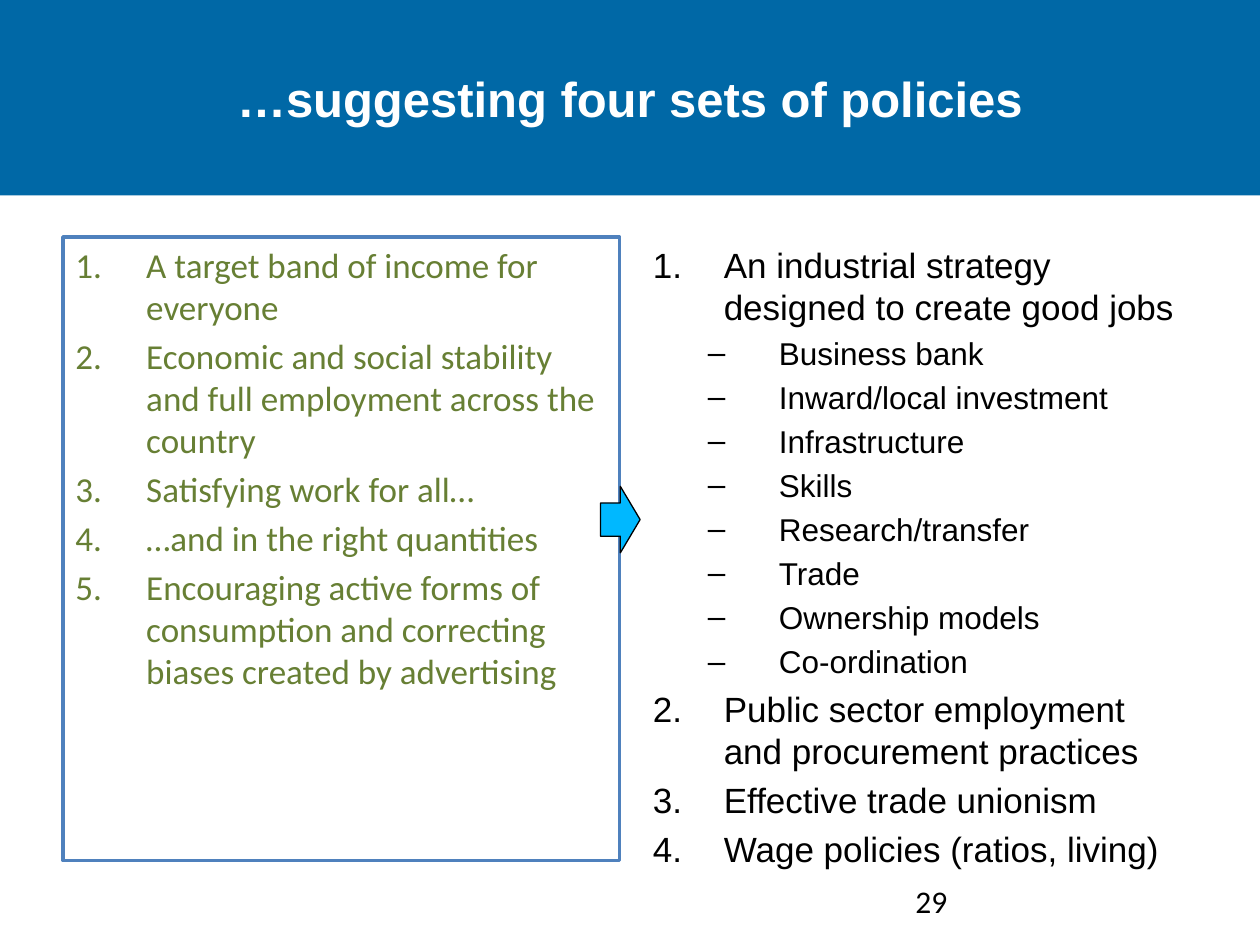
from dataclasses import dataclass

from lxml import etree
from pptx import Presentation
from pptx import util as u
from pptx.dml.color import RGBColor
from pptx.enum import shapes, text
from pptx.oxml.ns import qn


@dataclass(frozen=True)
class Theme:
    blue: str = "0068A6"
    frame: str = "4F81BD"
    green: str = "677F34"
    cyan: str = "00B8FF"
    white: str = "FFFFFF"
    black: str = "000000"
    sans: str = "Arial"
    body: str = "Calibri"
    head: int = 28
    main: int = 20
    sub: int = 18
    lead: float = 1.2
    gap: float = 0.2
    hang: float = 40.5
    step: float = 31.5


class Deck:
    """Hold the theme and the current slide, and draw each kind of element."""

    def __init__(self, theme):
        self.theme = theme
        self.file = Presentation()
        self.file.slide_width, self.file.slide_height = u.Pt(720), u.Pt(540)
        self.slide = self.file.slides.add_slide(self.file.slide_layouts[6])

    def shape(self, kind, box, fill, line=None, width=0):
        item = self.slide.shapes.add_shape(kind, *map(u.Pt, box))
        item.shadow.inherit = False
        item.fill.solid()
        item.fill.fore_color.rgb = RGBColor.from_string(fill)
        if line:
            item.line.color.rgb = RGBColor.from_string(line)
            item.line.width = u.Pt(width)
        else:
            item.line.fill.background()
        return item

    def frame(self, box):
        return self.slide.shapes.add_textbox(*map(u.Pt, box))

    def setup(self, item, anchor=text.MSO_ANCHOR.TOP):
        form = {"word_wrap": True, "vertical_anchor": anchor}
        for key, value in form.items():
            setattr(item.text_frame, key, value)
        return item.text_frame

    def phrase(self, para, words, size, font, color, align=text.PP_ALIGN.LEFT, bold=False):
        para.alignment = align
        run = para.add_run()
        run.text = words
        form = {"size": u.Pt(size), "name": font, "bold": bold}
        for key, value in form.items():
            setattr(run.font, key, value)
        run.font.color.rgb = RGBColor.from_string(color)

    def label(self, item, words, size, font, color, anchor=text.MSO_ANCHOR.TOP, **form):
        frame = self.setup(item, anchor)
        self.phrase(frame.paragraphs[0], words, size, font, color, **form)

    def bullet(self, para, level):
        look = self.theme
        props = para._p.get_or_add_pPr()
        props.set("marL", str(u.Pt(look.hang + level * look.step)))
        props.set("indent", str(-u.Pt(look.hang)))
        if level:
            etree.SubElement(props, qn("a:buFont")).set("typeface", look.sans)
            etree.SubElement(props, qn("a:buChar")).set("char", "–")
        else:
            etree.SubElement(props, qn("a:buAutoNum")).set("type", "arabicPeriod")

    def items(self, item, rows, font, color):
        look = self.theme
        frame = self.setup(item)
        for spot, (level, words) in enumerate(rows):
            para = frame.add_paragraph() if spot else frame.paragraphs[0]
            size = look.sub if level else look.main
            form = {
                "level": level,
                "line_spacing": u.Pt(size * look.lead),
                "space_before": u.Pt(size * look.gap),
            }
            for key, value in form.items():
                setattr(para, key, value)
            self.bullet(para, level)
            self.phrase(para, words, size, font, color)


GOALS = [
    "A target band of income for everyone",
    "Economic and social stability and full employment across the country",
    "Satisfying work for all…",
    "…and in the right quantities",
    "Encouraging active forms of consumption and correcting biases created by advertising",
]
PLANS = {
    "An industrial strategy designed to create good jobs": [
        "Business bank",
        "Inward/local investment",
        "Infrastructure",
        "Skills",
        "Research/transfer",
        "Trade",
        "Ownership models",
        "Co-ordination",
    ],
    "Public sector employment and procurement practices": [],
    "Effective trade unionism": [],
    "Wage policies (ratios, living)": [],
}


def main():
    look = Theme()
    deck = Deck(look)
    kind = shapes.MSO_SHAPE

    title = deck.shape(kind.RECTANGLE, (0, 0, 720, 111.6), look.blue)
    deck.label(title, "…suggesting four sets of policies", look.head, look.sans, look.white,
               text.MSO_ANCHOR.MIDDLE, align=text.PP_ALIGN.CENTER, bold=True)

    top, wide, high = 135.4, 318, 356.4
    goals = deck.shape(kind.RECTANGLE, (36, top, wide, high), look.white, look.frame, 2)
    deck.items(goals, [(0, goal) for goal in GOALS], look.body, look.green)

    rows = []
    for plan, parts in PLANS.items():
        rows += [(0, plan)] + [(1, part) for part in parts]
    deck.items(deck.frame((366, top, wide, high)), rows, look.sans, look.black)

    number = deck.frame((516, 500.4, 168, 28.8))
    deck.label(number, "29", look.sub, look.body, look.black)
    deck.shape(kind.RIGHT_ARROW, (343.2, 277.9, 22.6, 38), look.cyan, look.black, 0.75)
    deck.file.save("out.pptx")


if __name__ == "__main__":
    main()
